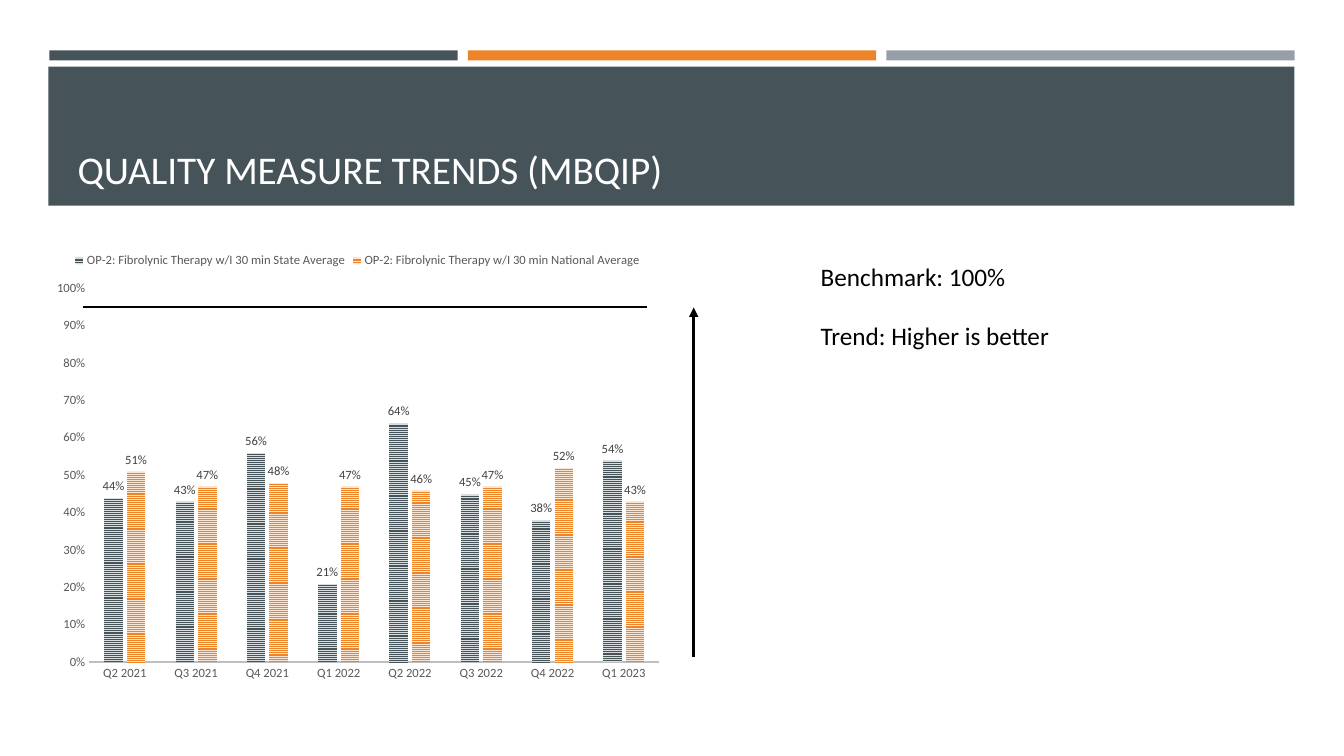
from lxml import etree
from pptx import Presentation
from pptx.chart.data import CategoryChartData
from pptx.dml.color import RGBColor
from pptx.enum import chart as ch, dml, shapes, text
from pptx.oxml import parse_xml
from pptx.oxml.ns import qn
from pptx.util import Inches, Pt

# Content
TITLE = "QUALITY MEASURE TRENDS (MBQIP)"
NOTES = ["Benchmark: 100%", "Trend: Higher is better"]
TERMS = ["Q2 2021", "Q3 2021", "Q4 2021", "Q1 2022",
         "Q2 2022", "Q3 2022", "Q4 2022", "Q1 2023"]
SLATE = RGBColor(0x46, 0x53, 0x59)
PALE = RGBColor(0xD8, 0xDD, 0xE0)
ORANGE = RGBColor(0xED, 0x84, 0x28)
CREAM = RGBColor(0xFB, 0xE6, 0xD4)
SILVER = RGBColor(0x96, 0x9F, 0xA7)
GRAY = RGBColor(0x59, 0x59, 0x59)
DARK = RGBColor(0x40, 0x40, 0x40)
RULE = RGBColor(0xBF, 0xBF, 0xBF)
BLACK = RGBColor(0, 0, 0)
WHITE = RGBColor(255, 255, 255)
FONT = "Calibri"
SERIES = [
    ("OP-2: Fibrolynic Therapy w/I 30 min State Average",
     (0.44, 0.43, 0.56, 0.21, 0.64, 0.45, 0.38, 0.54), SLATE, PALE),
    ("OP-2: Fibrolynic Therapy w/I 30 min National Average",
     (0.51, 0.47, 0.48, 0.47, 0.46, 0.47, 0.52, 0.43), ORANGE, CREAM),
]
PLOT = {"x": 0.073, "y": 0.103, "w": 0.908, "h": 0.832}


def box(*sides):
    return [Inches(side) for side in sides]


def style(font, size, color):
    font.name, font.size, font.bold = FONT, Pt(size), False
    font.color.rgb = color


def place(holder, sides, lines, size, color, anchor):
    holder.left, holder.top, holder.width, holder.height = box(*sides)
    frame = holder.text_frame
    frame.text = "\n".join(lines)
    frame.word_wrap = True
    frame.auto_size = text.MSO_AUTO_SIZE.NONE
    frame.vertical_anchor = anchor
    for i, para in enumerate(frame.paragraphs):
        style(para.font, size, color)
        para.alignment = text.PP_ALIGN.LEFT
        para.space_before = Pt(21 if i else 0)
        props = para._p.get_or_add_pPr()
        props.set("marL", "0")
        props.set("indent", "0")
        props.append(props.makeelement(qn("a:buNone"), {}))


def bar(sides, color):
    shape = slide.shapes.add_shape(shapes.MSO_SHAPE.RECTANGLE, *box(*sides))
    shape.shadow.inherit = False
    shape.fill.solid()
    shape.fill.fore_color.rgb = color
    shape.line.fill.background()


def stroke(start, end, width):
    line = slide.shapes.add_connector(
        shapes.MSO_CONNECTOR.STRAIGHT, *box(*start, *end))
    line.line.color.rgb = BLACK
    line.line.width = Pt(width)
    etree.SubElement(line._element.spPr, qn("a:effectLst"))
    return line


deck = Presentation()
deck.slide_width, deck.slide_height = box(13.33, 7.5)
slide = deck.slides.add_slide(deck.slide_layouts[1])
tree = slide.shapes._spTree
title, body = slide.placeholders

# Header bars
for i, color in enumerate((SLATE, ORANGE, SILVER)):
    bar((0.49 + i * 4.15, 0.5, 4.05, 0.1), color)
bar((0.48, 0.66, 12.36, 1.38), SLATE)

# Title and notes, in front of the header
place(title, (0.67, 1.33, 6.99, 0.63), [TITLE], 28, WHITE,
      text.MSO_ANCHOR.BOTTOM)
place(body, (8.04, 2.54, 4.81, 1.92), NOTES, 18, BLACK, text.MSO_ANCHOR.TOP)
tree.append(body._element)
tree.append(title._element)

# Chart
data = CategoryChartData(number_format="0%")
data.categories = TERMS
for name, vals, *_ in SERIES:
    data.add_series(name, vals)
chart = slide.shapes.add_chart(
    ch.XL_CHART_TYPE.COLUMN_CLUSTERED, *box(0.43, 2.4, 6.23, 4.46), data).chart
style(chart.font, 10, BLACK)
chart.has_title = False
chart.has_legend = True
chart.legend.position = ch.XL_LEGEND_POSITION.TOP
chart.legend.include_in_layout = False
style(chart.legend.font, 9, GRAY)

plot = chart.plots[0]
plot.gap_width, plot.overlap = 164, -22
plot.vary_by_categories = False
for series, (_, _, fore, back) in zip(plot.series, SERIES):
    fill = series.format.fill
    fill.patterned()
    fill.pattern = dml.MSO_PATTERN.NARROW_HORIZONTAL
    fill.fore_color.rgb, fill.back_color.rgb = fore, back
    tags = series.data_labels
    tags.show_value = True
    tags.position = ch.XL_LABEL_POSITION.OUTSIDE_END
    tags.number_format, tags.number_format_is_linked = "0%", False
    style(tags.font, 9, DARK)

# Axes
cats, vals = chart.category_axis, chart.value_axis
for axis in (cats, vals):
    axis.has_major_gridlines = False
    axis.major_tick_mark = axis.minor_tick_mark = ch.XL_TICK_MARK.NONE
    style(axis.tick_labels.font, 9, GRAY)
cats.format.line.color.rgb = RULE
cats.format.line.width = Pt(1.5)
vals.format.line.fill.background()
vals.minimum_scale, vals.maximum_scale, vals.major_unit = 0, 1, 0.1
vals.tick_labels.number_format = "0%"
vals.tick_labels.number_format_is_linked = False

# Fixed plot area
area = chart._chartSpace.find(".//" + qn("c:plotArea"))
for old in area.findall(qn("c:layout")):
    area.remove(old)
modes = "".join(f'<c:{k}Mode val="edge"/>' for k in "xy")
sizes = "".join(f'<c:{k} val="{v}"/>' for k, v in PLOT.items())
area.insert(0, parse_xml(
    '<c:layout xmlns:c="http://schemas.openxmlformats.org/drawingml/2006/chart">'
    f'<c:manualLayout><c:layoutTarget val="inner"/>{modes}{sizes}'
    '</c:manualLayout></c:layout>'))

# Benchmark line and trend arrow
stroke((0.82, 3.05), (6.42, 3.05), 1.5)
arrow = stroke((6.88, 6.52), (6.88, 3.05), 2.25)
etree.SubElement(arrow.line._get_or_add_ln(), qn("a:tailEnd"), type="triangle")

deck.save("out.pptx")
